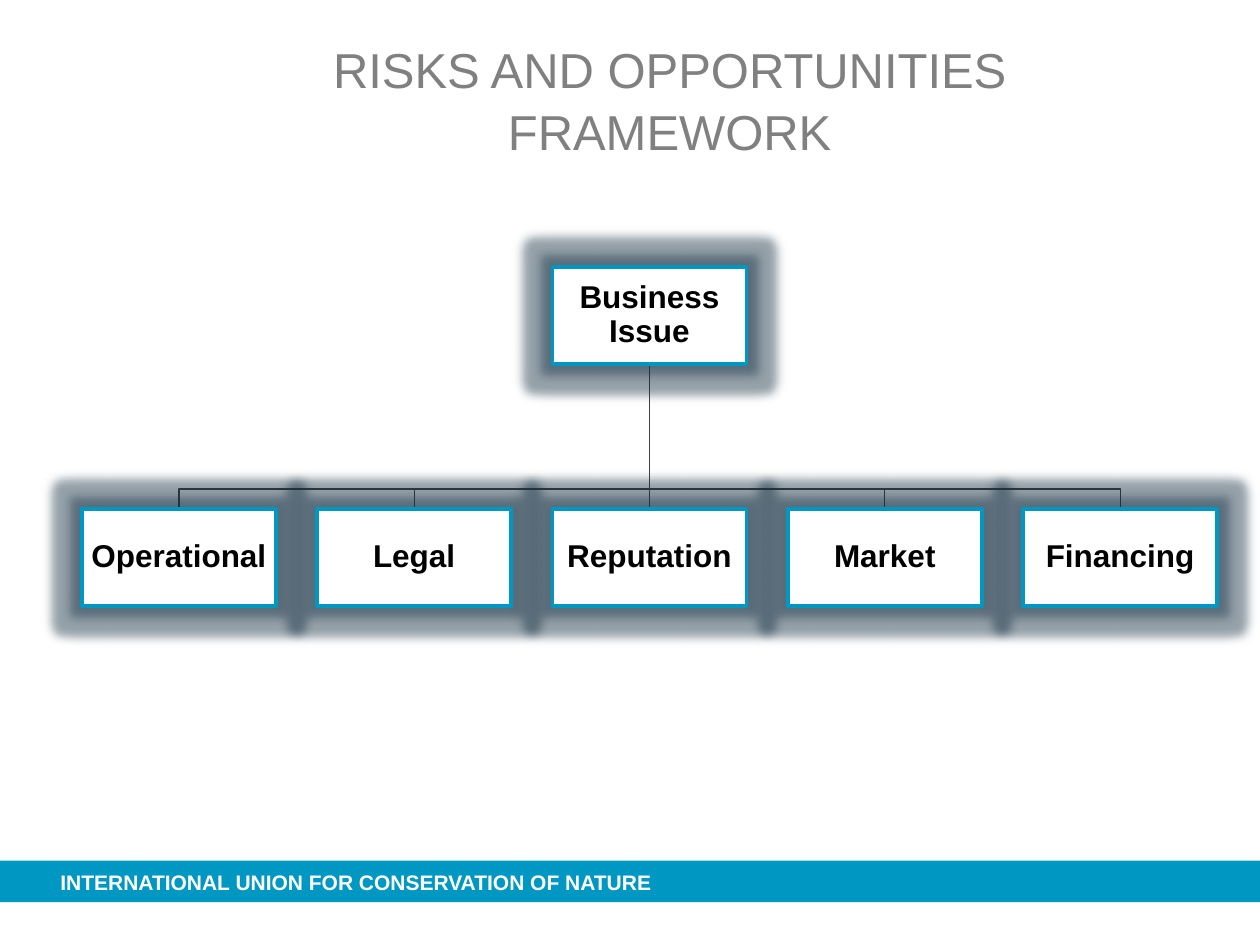
from lxml.etree import SubElement
from pptx import Presentation
from pptx.dml.color import RGBColor as RGB
from pptx.enum.shapes import MSO_CONNECTOR as CONN, MSO_SHAPE as SHAPE
from pptx.enum.text import MSO_ANCHOR as ANCHOR, PP_ALIGN as ALIGN
from pptx.oxml.ns import qn
from pptx.util import Inches, Pt

C = {"band": "0098C3", "title": "808080", "line": "414042", "halo": "143246",
     "white": "FFFFFF", "black": "000000"}
BOX_W, BOX_H = 1.54, 0.77
LEFT, PITCH = 0.65, 1.8675
TOP_ROW, RAIL, LOW_ROW = 2.12, 3.88, 4.04
RISKS = ["Operational", "Legal", "Reputation", "Market", "Financing"]
MIDDLE = len(RISKS) // 2


def write(sp, text, size=18, color="black", bold=False, align=ALIGN.CENTER,
          anchor=ANCHOR.MIDDLE, spacing=1.0, inset=0):
    tf = sp.text_frame
    tf.word_wrap = True
    tf.vertical_anchor = anchor
    tf.margin_left = tf.margin_right = tf.margin_top = tf.margin_bottom = Inches(inset)
    p = tf.paragraphs[0]
    p.alignment, p.line_spacing = align, spacing
    r = p.add_run()
    r.text = text
    r.font.name, r.font.size, r.font.bold = "Arial", Pt(size), bold
    r.font.color.rgb = RGB.from_string(C[color])


def add_box(text, column, top):
    """Add a framed box with a glow and a soft shadow around it."""
    sp = slide.shapes.add_shape(SHAPE.RECTANGLE, Inches(LEFT + column * PITCH),
                                Inches(top), Inches(BOX_W), Inches(BOX_H))
    sp.fill.solid()
    sp.fill.fore_color.rgb = RGB.from_string(C["white"])
    sp.line.color.rgb = RGB.from_string(C["band"])
    sp.line.width = Pt(2)
    sp.shadow.inherit = False
    effects = sp._element.spPr.find(qn("a:effectLst"))
    glow = SubElement(effects, qn("a:glow"), rad=str(Pt(11)))
    shadow = SubElement(effects, qn("a:outerShdw"), blurRad=str(Pt(6)), dist="0",
                        dir=str(315 * 60000), algn="ctr", rotWithShape="0")
    for effect, color, alpha in [(glow, "halo", 40), (shadow, "black", 20)]:
        clr = SubElement(effect, qn("a:srgbClr"), val=C[color])
        SubElement(clr, qn("a:alpha"), val=str(alpha * 1000))
    write(sp, text, bold=True, spacing=0.9, inset=0.01)
    return sp


prs = Presentation()
prs.slide_width, prs.slide_height = Inches(10), Inches(7.5)
slide = prs.slides.add_slide(prs.slide_layouts[5])

# Footer band
band = slide.shapes.add_shape(SHAPE.RECTANGLE, 0, Inches(6.83), prs.slide_width, Inches(0.33))
band.fill.solid()
band.fill.fore_color.rgb = RGB.from_string(C["band"])
band.line.fill.background()
band.shadow.inherit = False
footer = slide.shapes.add_textbox(Inches(0.48), Inches(6.9), Inches(5.6), Inches(0.2))
write(footer, "INTERNATIONAL UNION FOR CONSERVATION OF NATURE", size=12,
      color="white", bold=True, align=ALIGN.LEFT)

# Title
title = slide.shapes.title
title.left, title.top = Inches(1.93), Inches(0.29)
title.width, title.height = Inches(6.77), Inches(0.71)
write(title, "RISKS AND OPPORTUNITIES FRAMEWORK", size=28, color="title",
      anchor=ANCHOR.TOP, spacing=1.05)

# Lines from the issue to each risk, behind the boxes
centers = [LEFT + i * PITCH + BOX_W / 2 for i in range(len(RISKS))]
stem_x, stem_y = centers[MIDDLE], TOP_ROW + BOX_H
for i, x in enumerate(centers):
    if i == MIDDLE:
        line = stem = slide.shapes.add_connector(
            CONN.STRAIGHT, Inches(x), Inches(stem_y), Inches(x), Inches(LOW_ROW))
        SubElement(stem._element.spPr, qn("a:effectLst"))
    else:
        path_builder = slide.shapes.build_freeform(Inches(stem_x), Inches(stem_y))
        path_builder.add_line_segments(
            [(Inches(px), Inches(py)) for px, py in
             [(stem_x, RAIL), (x, RAIL), (x, LOW_ROW)]], close=False)
        line = path_builder.convert_to_shape()
        line.fill.background()
        line.shadow.inherit = False
    line.line.color.rgb = RGB.from_string(C["line"])
    line.line.width = Pt(0.75)

# Boxes
issue = add_box("Business Issue", MIDDLE, TOP_ROW)
risks = [add_box(name, i, LOW_ROW) for i, name in enumerate(RISKS)]
stem.begin_connect(issue, 2)
stem.end_connect(risks[MIDDLE], 0)

prs.save("out.pptx")
